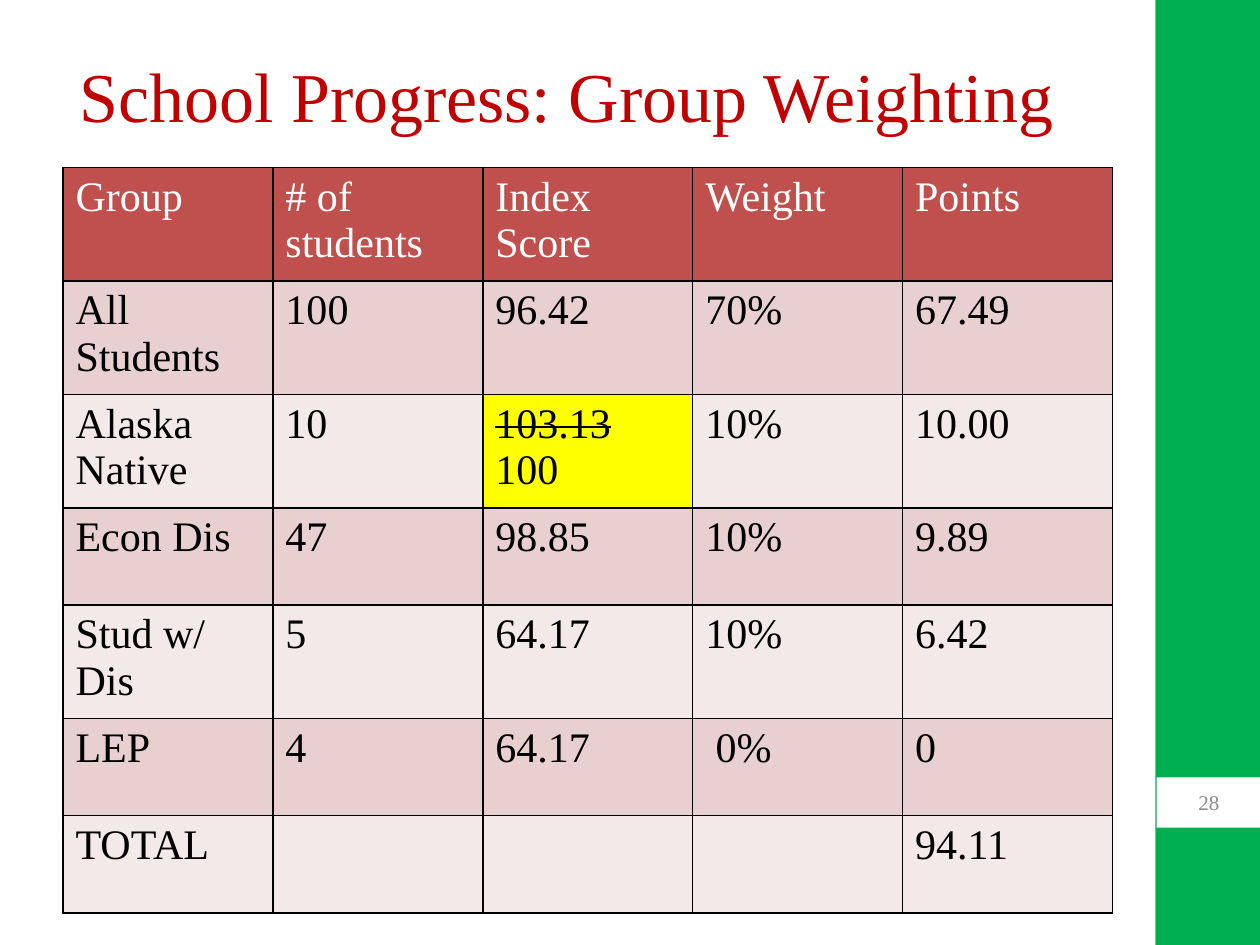
from lxml import etree
from pptx import Presentation
from pptx.dml.color import RGBColor
from pptx.enum.shapes import MSO_SHAPE
from pptx.enum.text import MSO_ANCHOR, PP_ALIGN
from pptx.oxml.ns import qn
from pptx.util import Inches, Pt

RECTANGLE = MSO_SHAPE.RECTANGLE
MIDDLE = MSO_ANCHOR.MIDDLE
CENTER = PP_ALIGN.CENTER

FONT = "Times New Roman"
BLACK, WHITE, GREEN, RED = "000000", "FFFFFF", "00B050", "C00000"
HEADER_FILL, BAND_FILLS, HIGHLIGHT = "C0504D", ("F4E9E9", "E8D0D0"), "FFFF00"

CAPPED_SCORE = "103.13\n100"  # the score above 100 is struck out
GROUP_ROWS = [
    ["Group", "# of students", "Index Score", "Weight", "Points"],
    ["All Students", "100", "96.42", "70%", "67.49"],
    ["Alaska Native", "10", CAPPED_SCORE, "10%", "10.00"],
    ["Econ Dis", "47", "98.85", "10%", "9.89"],
    ["Stud w/ Dis", "5", "64.17", "10%", "6.42"],
    ["LEP", "4", "64.17", " 0%", "0"],
    ["TOTAL", "", "", "", "94.11"],
]


def color(hex_code):
    return RGBColor.from_string(hex_code)


def add_run(paragraph, text, size, hex_code):
    run = paragraph.add_run()
    run.text = text
    run.font.name = FONT
    run.font.size = Pt(size)
    run.font.color.rgb = color(hex_code)
    return run


def write_centered(frame, text, size, hex_code):
    frame.word_wrap = True
    frame.vertical_anchor = MIDDLE
    paragraph = frame.paragraphs[0]
    paragraph.alignment = CENTER
    add_run(paragraph, text, size, hex_code)


def add_block(slide, box, fill):
    block = slide.shapes.add_shape(RECTANGLE, *map(Inches, box))
    block.shadow.inherit = False
    block.fill.solid()
    block.fill.fore_color.rgb = color(fill)
    block.line.fill.background()
    return block


def add_title(slide, box):
    title = slide.shapes.add_textbox(*map(Inches, box))
    write_centered(title.text_frame, "School Progress: Group Weighting", 40, RED)


def add_page_number(slide, box):
    number = add_block(slide, box, WHITE)
    write_centered(number.text_frame, "28", 12, "8C8C8C")


def set_borders(cell, hex_code, width):
    # Border lines come before the fill in the cell properties
    properties = cell._tc.get_or_add_tcPr()
    for index, side in enumerate(("a:lnL", "a:lnR", "a:lnT", "a:lnB")):
        line = etree.Element(qn(side), w=str(Pt(width)))
        fill = etree.SubElement(line, qn("a:solidFill"))
        etree.SubElement(fill, qn("a:srgbClr"), val=hex_code)
        properties.insert(index, line)


def fill_cell(cell, text, fill, text_color):
    cell.fill.solid()
    cell.fill.fore_color.rgb = color(fill)
    set_borders(cell, BLACK, 1)
    if not text:
        return
    frame = cell.text_frame
    for index, line in enumerate(text.split("\n")):
        paragraph = frame.add_paragraph() if index else frame.paragraphs[0]
        run = add_run(paragraph, line, 24, text_color)
        if text == CAPPED_SCORE and index == 0:
            run._r.get_or_add_rPr().set("strike", "sngStrike")


def add_group_table(slide, box):
    left, top, width, height = map(Inches, box)
    row_count, column_count = len(GROUP_ROWS), len(GROUP_ROWS[0])
    table = slide.shapes.add_table(
        row_count, column_count, left, top, width, height).table
    for r, row in enumerate(GROUP_ROWS):
        for c, text in enumerate(row):
            fill = BAND_FILLS[r % 2] if r else HEADER_FILL
            if text == CAPPED_SCORE:
                fill = HIGHLIGHT
            fill_cell(table.cell(r, c), text, fill, BLACK if r else WHITE)


def main():
    presentation = Presentation()
    presentation.slide_width = Inches(10)
    presentation.slide_height = Inches(7.5)
    slide = presentation.slides.add_slide(presentation.slide_layouts[6])

    # Side band, title, table and page number
    add_block(slide, (9.17, 0, 0.83, 7.5), GREEN)
    add_title(slide, (0.33, 0.25, 8.33, 1))
    add_group_table(slide, (0.5, 1.33, 8.33, 5.4))
    add_page_number(slide, (9.18, 6.17, 0.83, 0.4))

    presentation.save("out.pptx")


if __name__ == "__main__":
    main()
